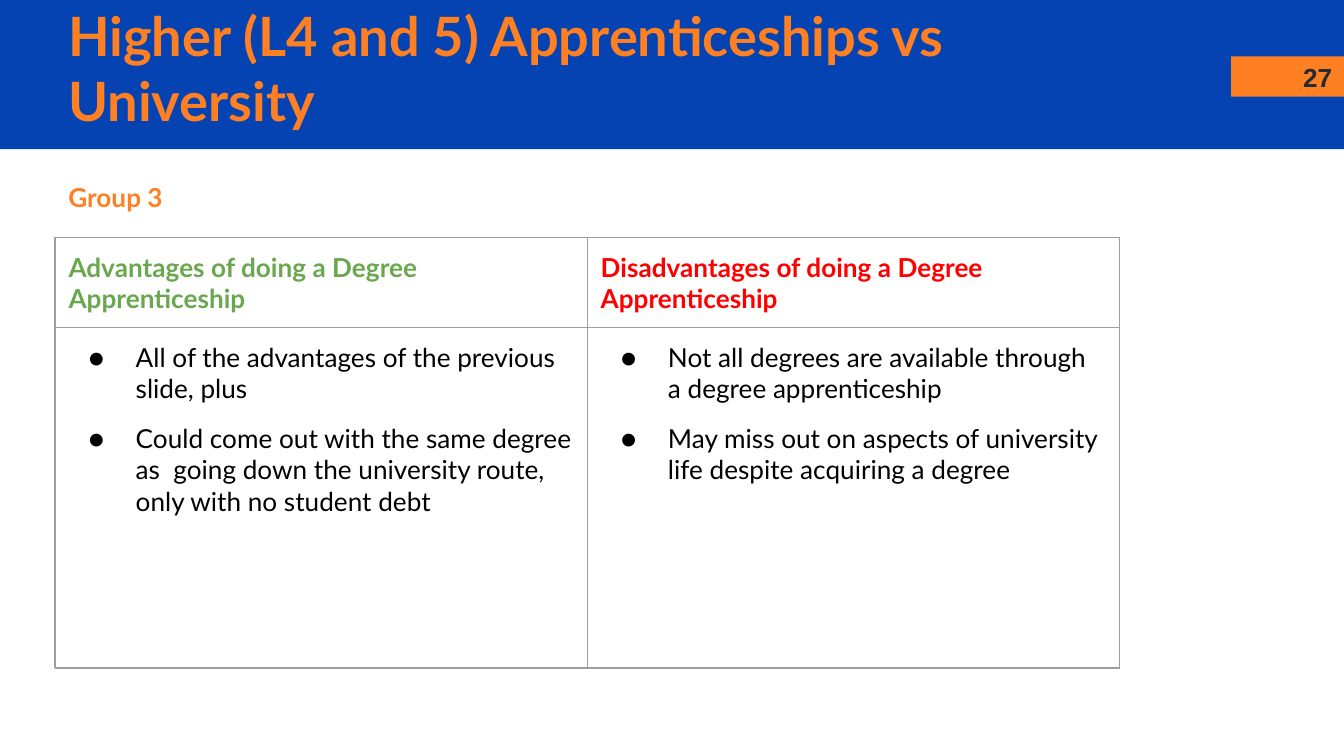
from lxml import etree
from pptx import Presentation
from pptx import util as u
from pptx.dml.color import RGBColor
from pptx.enum import shapes, text
from pptx.oxml import ns

BLUE, ORANGE, GREEN, RED = "0543B3", "FF8022", "6AA84F", "FF0000"
BLACK, DARK, GREY = "000000", "262A33", "9E9E9E"
SLIDE_WIDTH = 10
LEFT = 0.41


def color(value):
    return RGBColor.from_string(value)


def add_element(parent, tag, **attributes):
    return etree.SubElement(parent, ns.qn(tag), attributes)


class SlideBuilder:
    """Holds the shared style and the slide being built."""

    font_name = "Lato"
    inset = u.Inches(0.1)
    body_size = 14

    def __init__(self, slide):
        self.slide = slide

    def rectangle(self, left, top, width, height, fill):
        shape = self.slide.shapes.add_shape(
            shapes.MSO_SHAPE.RECTANGLE,
            u.Inches(left), u.Inches(top), u.Inches(width), u.Inches(height))
        shape.shadow.inherit = False
        shape.fill.solid()
        shape.fill.fore_color.rgb = color(fill)
        shape.line.fill.background()

    def run(self, paragraph, words, fill, size=body_size, bold=True, font_name=font_name):
        run = paragraph.add_run()
        run.text = words
        run.font.name = font_name
        run.font.size = u.Pt(size)
        run.font.bold = bold
        run.font.color.rgb = color(fill)

    def set_margins(self, holder):
        holder.margin_left = holder.margin_right = self.inset
        holder.margin_top = holder.margin_bottom = self.inset

    def text_box(self, left, top, width, height, words, fill,
                 anchor=text.MSO_ANCHOR.TOP, align=text.PP_ALIGN.LEFT, **style):
        box = self.slide.shapes.add_textbox(
            u.Inches(left), u.Inches(top), u.Inches(width), u.Inches(height))
        frame = box.text_frame
        frame.word_wrap = True
        frame.vertical_anchor = anchor
        self.set_margins(frame)
        paragraph = frame.paragraphs[0]
        paragraph.alignment = align
        self.run(paragraph, words, fill, **style)

    def bullets(self, cell, items):
        frame = cell.text_frame
        for index, item in enumerate(items):
            paragraph = frame.add_paragraph() if index else frame.paragraphs[0]
            properties = paragraph._p.get_or_add_pPr()
            properties.set("marL", str(u.Inches(0.5)))
            properties.set("indent", str(u.Inches(-0.35)))
            paragraph.space_before = u.Pt(10 if index else 0)
            bullet_color = add_element(properties, "a:buClr")
            add_element(bullet_color, "a:srgbClr", val=BLACK)
            add_element(properties, "a:buSzPts", val=str(self.body_size * 100))
            add_element(properties, "a:buFont", typeface=self.font_name)
            add_element(properties, "a:buChar", char="●")
            self.run(paragraph, item, BLACK, bold=False)

    def borders(self, cell):
        """Outline all four sides; the lines must precede the cell's fill."""
        properties = cell._tc.get_or_add_tcPr()
        for index, side in enumerate(("a:lnL", "a:lnR", "a:lnT", "a:lnB")):
            line = add_element(properties, side, w=str(u.Pt(0.75)))
            fill = add_element(line, "a:solidFill")
            add_element(fill, "a:srgbClr", val=GREY)
            properties.insert(index, line)

    def comparison_table(self, left, top, column_width, row_heights, columns):
        """Each column is a (heading, heading colour, bullet items) tuple."""
        table = self.slide.shapes.add_table(
            len(row_heights), len(columns), u.Inches(left), u.Inches(top),
            u.Inches(column_width * len(columns)), u.Inches(sum(row_heights))).table
        table.first_row = table.horz_banding = False
        for row, height in zip(table.rows, row_heights):
            row.height = u.Inches(height)
        for index, (heading, fill, items) in enumerate(columns):
            table.columns[index].width = u.Inches(column_width)
            self.run(table.cell(0, index).text_frame.paragraphs[0], heading, fill)
            self.bullets(table.cell(1, index), items)
        for cell in table.iter_cells():
            self.set_margins(cell)
            cell.fill.background()
            self.borders(cell)


def main():
    presentation = Presentation()
    presentation.slide_width = u.Inches(SLIDE_WIDTH)
    presentation.slide_height = u.Inches(SLIDE_WIDTH * 9 / 16)
    builder = SlideBuilder(presentation.slides.add_slide(presentation.slide_layouts[6]))

    builder.rectangle(0, 0, SLIDE_WIDTH, 1.11, BLUE)
    builder.rectangle(9.16, 0.42, 0.84, 0.3, ORANGE)
    builder.text_box(LEFT, 0.22, 8.46, 0.56, "Higher (L4 and 5) Apprenticeships vs University",
                     ORANGE, anchor=text.MSO_ANCHOR.MIDDLE, size=29)
    builder.comparison_table(LEFT, 1.77, 3.96, (0.67, 2.53), [
        ("Advantages of doing a Degree Apprenticeship", GREEN, [
            "All of the advantages of the previous slide, plus",
            "Could come out with the same degree as  going down the university route, "
            "only with no student debt"]),
        ("Disadvantages of doing a Degree Apprenticeship", RED, [
            "Not all degrees are available through a degree apprenticeship",
            "May miss out on aspects of university life despite acquiring a degree"]),
    ])
    builder.text_box(LEFT, 1.25, 4.47, 0.44, "Group 3", ORANGE)
    builder.text_box(9.49, 0.36, 0.52, 0.25, "27", DARK,
                     align=text.PP_ALIGN.RIGHT, font_name="Arial")
    presentation.save("out.pptx")


if __name__ == "__main__":
    main()
